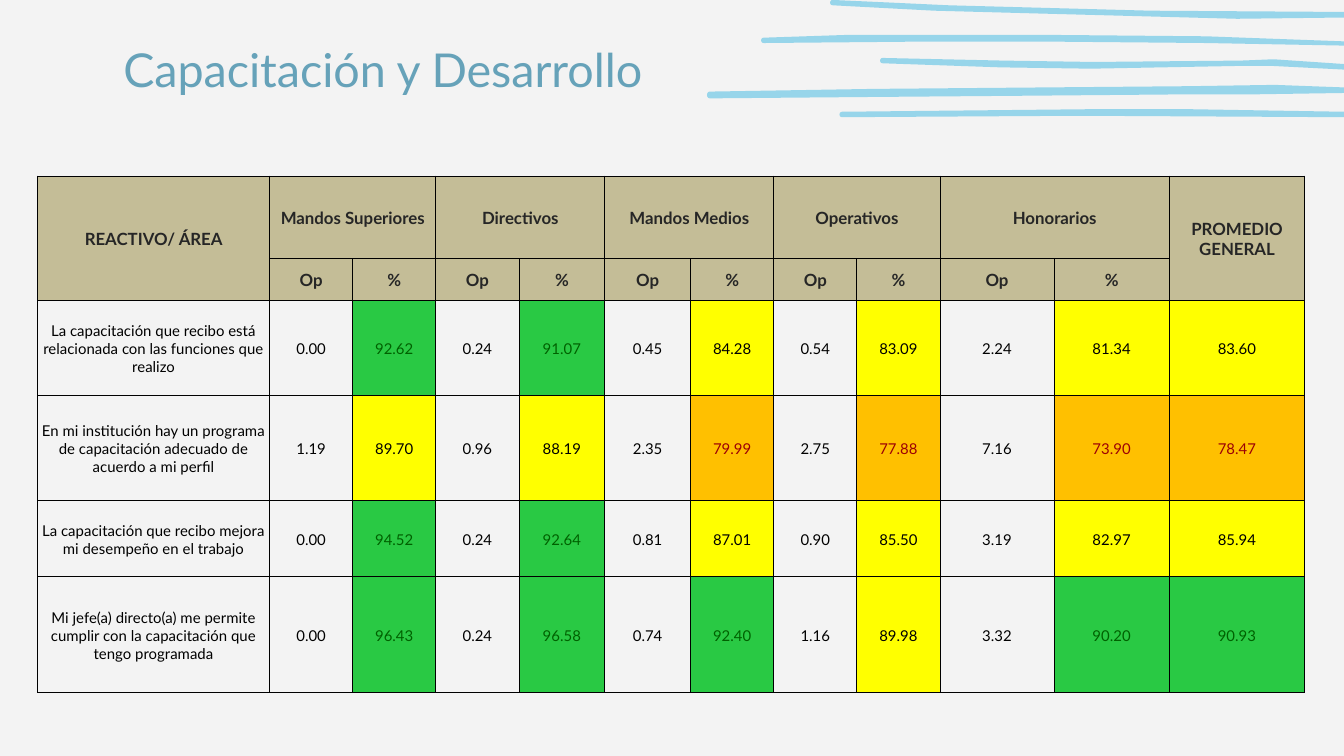
from dataclasses import dataclass
from math import cos, pi, sin

from lxml.etree import SubElement
from pptx import Presentation
from pptx.dml.color import RGBColor
from pptx.enum.text import MSO_ANCHOR as Anchor, MSO_AUTO_SIZE as AutoSize, PP_ALIGN as Align
from pptx.oxml.ns import qn
from pptx.util import Inches, Pt


@dataclass(frozen=True)
class Theme:
    font: str = "Lato"
    title_size: int = 25
    header_size: int = 9
    body_size: int = 8
    border_width: float = 0.5
    background: str = "F3F3F3"
    stroke: str = "97D5EA"
    title: str = "66A2B9"
    header_fill: str = "C4BD97"
    header_text: str = "262626"
    ink: str = "000000"
    # lowest score, fill, text
    bands: tuple = (
        (90, "29C944", "006100"),
        (80, "FFFF00", "000000"),
        (0, "FFC000", "9C0006"),
    )


THEME = Theme()
SLIDE_WIDTH, SLIDE_HEIGHT = 10, 5.625

AREAS = ["Mandos Superiores", "Directivos", "Mandos Medios", "Operativos", "Honorarios"]
# Each area gives an Op and a % value; the general average closes the row.
RESULTS = [
    ("La capacitación que recibo está relacionada con las funciones que realizo",
     "0.00 92.62 0.24 91.07 0.45 84.28 0.54 83.09 2.24 81.34 83.60"),
    ("En mi institución hay un programa de capacitación adecuado de acuerdo a mi perfil",
     "1.19 89.70 0.96 88.19 2.35 79.99 2.75 77.88 7.16 73.90 78.47"),
    ("La capacitación que recibo mejora mi desempeño en el trabajo",
     "0.00 94.52 0.24 92.64 0.81 87.01 0.90 85.50 3.19 82.97 85.94"),
    ("Mi jefe(a) directo(a) me permite cumplir con la capacitación que tengo programada",
     "0.00 96.43 0.24 96.58 0.74 92.40 1.16 89.98 3.32 90.20 90.93"),
]
COLUMN_SHARES = [1.73, 0.62, 0.62, 0.62, 0.64, 0.64, 0.62, 0.62, 0.62, 0.85, 0.86, 1.01]
ROW_SHARES = [0.61, 0.27, 0.7, 0.78, 0.56, 0.86]

# Upper and lower edge of each brush stroke, left to right, on a 487 x 87 grid.
STROKE_GRID = (487, 87)
STROKES = [
    ([(99, 0), (142, 2), (185, 4), (334, 8), (484, 9)],
     [(99, 4), (174, 8), (248, 10), (398, 14), (484, 13)]),
    ([(48, 28), (108, 26), (266, 26), (375, 27), (484, 31)],
     [(48, 32), (157, 31), (266, 31), (375, 32), (484, 34)]),
    ([(136, 43), (225, 45), (292, 46), (401, 45), (425, 44), (484, 48)],
     [(136, 47), (223, 50), (290, 51), (397, 49), (425, 49), (484, 52)]),
    ([(8, 68), (129, 66), (243, 65), (362, 64), (426, 63), (480, 65)],
     [(8, 73), (126, 72), (247, 71), (365, 70), (413, 70), (480, 69)]),
    ([(106, 83), (296, 81), (359, 81), (477, 83)],
     [(106, 87), (274, 86), (291, 86), (477, 87)]),
]


def slide_box(left, top, width, height):
    """Turn shares of the slide into lengths."""
    return (Inches(left * SLIDE_WIDTH), Inches(top * SLIDE_HEIGHT),
            Inches(width * SLIDE_WIDTH), Inches(height * SLIDE_HEIGHT))


def rgb(code):
    return RGBColor.from_string(code)


def write(frame, text, size, color, bold=False, align=Align.CENTER):
    frame.word_wrap = True
    paragraph = frame.paragraphs[0]
    paragraph.alignment = align
    run = paragraph.add_run()
    run.text = text
    font = run.font
    font.name, font.size, font.bold = THEME.font, Pt(size), bold
    font.color.rgb = rgb(color)


def end_cap(start, end, bulge):
    """Points of a half ellipse between the two edges of a stroke end."""
    (x, y1), (_, y2) = start, end
    return [(x + bulge * sin(pi * i / 6), (y1 + y2) / 2 + (y1 - y2) / 2 * cos(pi * i / 6))
            for i in range(1, 6)]


def add_brush_strokes(slide, box):
    left, top, width, height = box
    columns, rows = STROKE_GRID
    group = slide.shapes.add_group_shape()
    for upper, lower in STROKES:
        outline = [*upper, *end_cap(upper[-1], lower[-1], 2),
                   *reversed(lower), *end_cap(lower[0], upper[0], -2)]
        points = [(left + x * width / columns, top + y * height / rows) for x, y in outline]
        builder = group.shapes.build_freeform(*points[0])
        builder.add_line_segments(points[1:], close=True)
        stroke = builder.convert_to_shape()
        stroke.shadow.inherit = False
        stroke.fill.solid()
        stroke.fill.fore_color.rgb = rgb(THEME.stroke)
        stroke.line.fill.background()


def add_title(slide, box, text):
    title = slide.shapes.title
    title.left, title.top, title.width, title.height = box
    frame = title.text_frame
    frame.auto_size = AutoSize.NONE
    frame.vertical_anchor = Anchor.MIDDLE
    frame.margin_left = frame.margin_right = Inches(0.1)
    frame.margin_top = frame.margin_bottom = Inches(0.1)
    write(frame, text, THEME.title_size, THEME.title, align=Align.RIGHT)


def add_borders(cell):
    properties = cell._tc.get_or_add_tcPr()
    for side in ("a:lnL", "a:lnR", "a:lnT", "a:lnB"):
        line = SubElement(properties, qn(side), w=str(Pt(THEME.border_width)))
        SubElement(SubElement(line, qn("a:solidFill")), qn("a:srgbClr"), val=THEME.ink)


def fill_cell(cell, text, fill=None, size=THEME.body_size, color=THEME.ink, bold=False):
    cell.vertical_anchor = Anchor.MIDDLE
    cell.margin_left = cell.margin_right = cell.margin_top = Inches(0.01)
    cell.margin_bottom = 0
    if fill:
        cell.fill.solid()
        cell.fill.fore_color.rgb = rgb(fill)
    else:
        cell.fill.background()
    write(cell.text_frame, text, size, color, bold)


def fill_header(table):
    style = dict(fill=THEME.header_fill, size=THEME.header_size,
                 color=THEME.header_text, bold=True)
    last = len(COLUMN_SHARES) - 1
    for column, heading in ((0, "REACTIVO/ ÁREA"), (last, "PROMEDIO GENERAL")):
        table.cell(0, column).merge(table.cell(1, column))
        fill_cell(table.cell(0, column), heading, **style)
    for index, area in enumerate(AREAS):
        column = 1 + 2 * index
        table.cell(0, column).merge(table.cell(0, column + 1))
        fill_cell(table.cell(0, column), area, **style)
        fill_cell(table.cell(1, column), "Op", **style)
        fill_cell(table.cell(1, column + 1), "%", **style)


def fill_results(table):
    last = len(COLUMN_SHARES) - 1
    for row, (statement, values) in enumerate(RESULTS, start=2):
        fill_cell(table.cell(row, 0), statement)
        for column, value in enumerate(values.split(), start=1):
            fill, color = None, THEME.ink
            if column % 2 == 0 or column == last:
                _, fill, color = next(b for b in THEME.bands if float(value) >= b[0])
            fill_cell(table.cell(row, column), value, fill, color=color)


def add_results_table(slide, box):
    _, _, width, height = box
    table = slide.shapes.add_table(len(ROW_SHARES), len(COLUMN_SHARES), *box).table
    table.first_row = table.horz_banding = False
    for column, share in zip(table.columns, COLUMN_SHARES):
        column.width = int(width * share / sum(COLUMN_SHARES))
    for row, share in zip(table.rows, ROW_SHARES):
        row.height = int(height * share / sum(ROW_SHARES))
    for cell in table.iter_cells():
        add_borders(cell)
    fill_header(table)
    fill_results(table)


def main():
    deck = Presentation()
    deck.slide_width, deck.slide_height = Inches(SLIDE_WIDTH), Inches(SLIDE_HEIGHT)
    slide = deck.slides.add_slide(deck.slide_layouts.get_by_name("Title Only"))
    slide.background.fill.solid()
    slide.background.fill.fore_color.rgb = rgb(THEME.background)
    add_brush_strokes(slide, slide_box(0.52, 0, 0.49, 0.155))
    add_title(slide, slide_box(0.028, 0.036, 0.46, 0.11), "Capacitación y Desarrollo")
    add_results_table(slide, slide_box(0.028, 0.233, 0.943, 0.677))
    deck.save("out.pptx")


if __name__ == "__main__":
    main()
